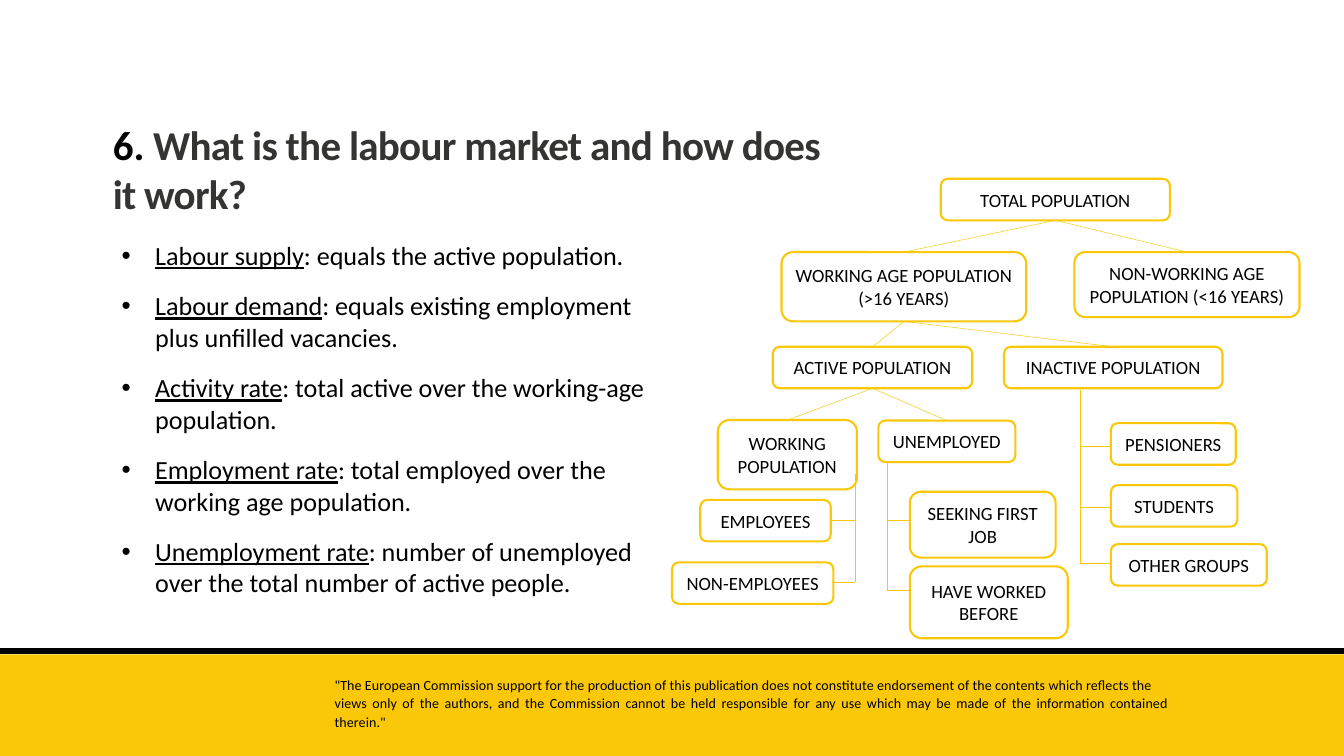
"""Build the labour market slide with its population tree."""
from lxml.etree import SubElement
from pptx import Presentation
from pptx.dml.color import RGBColor as Rgb
from pptx.enum.shapes import MSO_CONNECTOR as Link, MSO_SHAPE as Shape
from pptx.enum.text import MSO_ANCHOR as Anchor, MSO_AUTO_SIZE as Auto, PP_ALIGN as Align
from pptx.oxml.ns import qn
from pptx.util import Cm, Pt

HUES = {"gold": "FAC709", "black": "000000", "grey": "343433", "white": "FFFFFF"}
FRAME = {"word_wrap": True, "auto_size": Auto.NONE, "vertical_anchor": Anchor.TOP}


def write(para, text, size, hue="black", space=0, **extra):
    run = para.add_run()
    run.text = text
    looks = {"name": "Calibri", "size": Pt(size), **extra}
    for key, value in looks.items():
        setattr(run.font, key, value)
    run.font.color.rgb = Rgb.from_string(HUES[hue])
    if space:
        run.font._element.set("spc", str(space))


def draw(x1, y1, x2, y2, hue="gold", width=0.5):
    line = slide.shapes.add_connector(Link.STRAIGHT, Cm(x1), Cm(y1), Cm(x2), Cm(y2))
    line.line.color.rgb = Rgb.from_string(HUES[hue])
    line.line.width = Pt(width)
    SubElement(line._element.spPr, qn("a:effectLst"))
    return line


deck = Presentation()
deck.slide_width, deck.slide_height = Cm(50.8), Cm(28.58)
slide = deck.slides.add_slide(deck.slide_layouts[1])

band = slide.shapes.add_shape(Shape.RECTANGLE, Cm(0), Cm(24.74), Cm(50.8), Cm(3.84))
band.shadow.inherit = False
band.fill.solid()
band.fill.fore_color.rgb = Rgb.from_string(HUES["gold"])
band.line.fill.background()
draw(0, 24.61, 50.8, 24.61, "black", 6.75)

title, body = slide.placeholders
note = slide.shapes.add_textbox(0, 0, 0, 0)
spots = [
    (title, 4.01, 4.37, 27.94, 4.01),
    (body, 4.34, 8.92, 20.52, 15.5),
    (note, 12.37, 25.5, 32.08, 2.24),
]
for item, *place in spots:
    for key, value in zip(("left", "top", "width", "height"), place):
        setattr(item, key, Cm(value))
    for key, value in FRAME.items():
        setattr(item.text_frame, key, value)

head = title.text_frame.paragraphs[0]
head.alignment = Align.LEFT
write(head, "6.", 44, bold=True)
write(head, " What is the labour market and how does it work?", 44, "grey", -80, bold=True)

terms = {
    "Labour supply": "equals the active population.",
    "Labour demand": "equals existing employment plus unfilled vacancies.",
    "Activity rate": "total active over the working-age population.",
    "Employment rate": "total employed over the working age population.",
    "Unemployment rate": "number of unemployed over the total number of active people.",
}
for place, (term, sense) in enumerate(terms.items()):
    frame = body.text_frame
    para = frame.add_paragraph() if place else frame.paragraphs[0]
    props = para._p.get_or_add_pPr()
    props.set("marL", str(Cm(1.27)))
    props.set("indent", str(Cm(-1.27)))
    para.space_before = Pt(20.5 if place else 0)
    write(para, term, 28, underline=True)
    write(para, f": {sense}", 28, underline=False)

lines = [
    (Pt(16.1), '"The European Commission support for the production of this publication does not '
     "constitute endorsement of the contents which reflects the"),
    (1.13, "views only of the authors, and the Commission cannot be held responsible for any use "
     'which may be made of the information contained therein."'),
]
note.text_frame.margin_left = Cm(0.28)
for place, (pitch, text) in enumerate(lines):
    frame = note.text_frame
    para = frame.add_paragraph() if place else frame.paragraphs[0]
    para.alignment = Align.JUSTIFY
    para.line_spacing = pitch
    write(para, text, 15, space=10)

groups = {
    "TOTAL POPULATION": (35.56, 6.76, 8.66, 1.57),
    "WORKING AGE POPULATION (>16 YEARS)": (29.54, 9.53, 9.25, 2.62),
    "NON-WORKING AGE POPULATION (<16 YEARS)": (40.61, 9.53, 8.51, 2.46),
    "ACTIVE POPULATION": (29.21, 13.11, 7.54, 1.57),
    "INACTIVE POPULATION": (37.95, 13.11, 8.26, 1.57),
    "WORKING POPULATION": (27.13, 15.88, 5.26, 2.62),
    "UNEMPLOYED": (33.2, 15.9, 5.18, 1.57),
    "EMPLOYEES": (26.47, 18.9, 4.93, 1.57),
    "NON-EMPLOYEES": (25.4, 21.26, 6.1, 1.57),
    "SEEKING FIRST JOB": (34.39, 18.59, 5.51, 2.49),
    "HAVE WORKED BEFORE": (34.39, 21.41, 5.97, 2.72),
    "PENSIONERS": (41.99, 16, 4.72, 1.57),
    "STUDENTS": (41.99, 18.34, 4.78, 1.57),
    "OTHER GROUPS": (41.99, 20.57, 5.89, 1.57),
}
boxes = []
for text, place in groups.items():
    box = slide.shapes.add_shape(Shape.ROUNDED_RECTANGLE, *map(Cm, place))
    box.shadow.inherit = False
    box.fill.solid()
    box.fill.fore_color.rgb = Rgb.from_string(HUES["white"])
    box.line.color.rgb = Rgb.from_string(HUES["gold"])
    box.line.width = Pt(2.25)
    box.text_frame.word_wrap = True
    box.text_frame.vertical_anchor = Anchor.MIDDLE
    para = box.text_frame.paragraphs[0]
    para.alignment = Align.CENTER
    write(para, text, 20)
    boxes.append(box)

for parent, kids in {0: (1, 2), 1: (3, 4), 3: (5, 6)}.items():
    for kid in kids:
        branch = draw(0, 0, 1, 1)
        branch.begin_connect(boxes[parent], 2)
        branch.end_connect(boxes[kid], 0)

stems = [
    (40.82, 14.73, 41.99, (16.87, 19.19, 21.31)),
    (32.33, 17.93, 31.45, (19.66, 22.02)),
    (33.52, 17.45, 34.39, (19.66, 22.33)),
]
for stem, top, edge, rows in stems:
    draw(stem, top, stem, rows[-1])
    for row in rows:
        draw(edge, row, stem, row)

deck.save("out.pptx")
